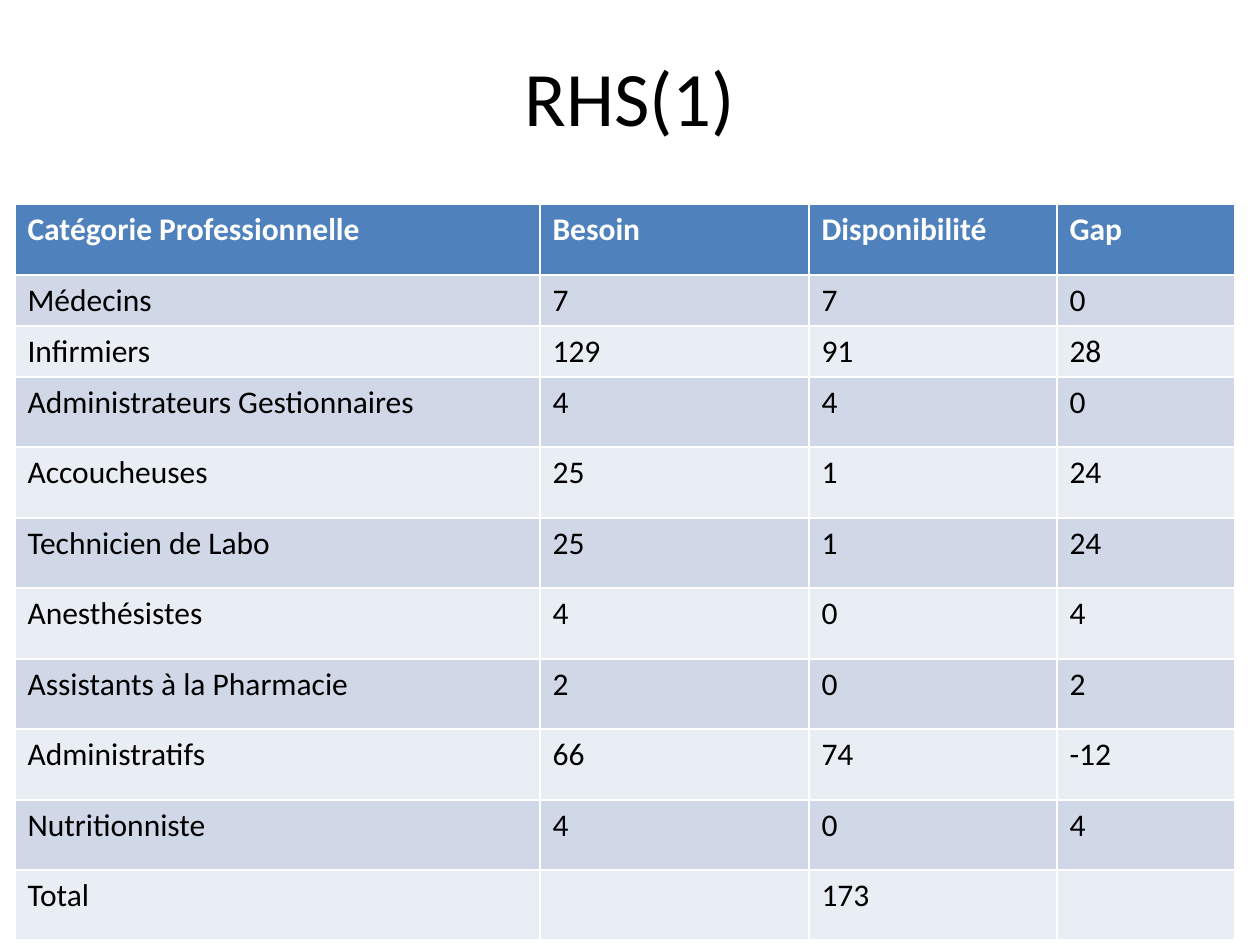
import itertools

import pptx
import pptx.dml.color
import pptx.enum.text
import pptx.util

PX = 914400 / 126


def px(length):
    return pptx.util.Emu(round(length * PX))


def color(value):
    return pptx.dml.color.RGBColor.from_string(value)


deck = pptx.Presentation()
deck.slide_width = px(1260)
deck.slide_height = px(945)
slide = deck.slides.add_slide(deck.slide_layouts[6])

title = slide.shapes.add_textbox(px(63), px(17), px(1134), px(158)).text_frame
title.word_wrap = True
title.vertical_anchor = pptx.enum.text.MSO_ANCHOR.MIDDLE
heading = title.paragraphs[0]
heading.text = "RHS(1)"
heading.alignment = pptx.enum.text.PP_ALIGN.CENTER
heading.font.name = "Calibri"
heading.font.size = pptx.util.Pt(44)
heading.font.color.rgb = color("000000")

staff = [
    ("Catégorie Professionnelle", "Besoin", "Disponibilité", "Gap"),
    ("Médecins", "7", "7", "0"),
    ("Infirmiers", "129", "91", "28"),
    ("Administrateurs Gestionnaires", "4", "4", "0"),
    ("Accoucheuses", "25", "1", "24"),
    ("Technicien de Labo", "25", "1", "24"),
    ("Anesthésistes", "4", "0", "4"),
    ("Assistants à la Pharmacie", "2", "0", "2"),
    ("Administratifs", "66", "74", "-12"),
    ("Nutritionniste", "4", "0", "4"),
    ("Total", "", "173", ""),
]
column_edges = [15, 540, 809, 1057, 1235]
row_edges = [204, 275, 326, 377, 447, 518, 588, 659, 729, 800, 870, 940]

left, right = column_edges[0], column_edges[-1]
top, bottom = row_edges[0], row_edges[-1]
staffing = slide.shapes.add_table(
    len(staff), len(staff[0]), px(left), px(top), px(right - left), px(bottom - top)
).table
for column, (start, end) in zip(staffing.columns, itertools.pairwise(column_edges)):
    column.width = px(end - start)
for row, (start, end) in zip(staffing.rows, itertools.pairwise(row_edges)):
    row.height = px(end - start)

for r, entries in enumerate(staff):
    is_header = r == 0
    band = "4F81BD" if is_header else ("E9EDF4", "D0D8E8")[r % 2]
    for c, entry in enumerate(entries):
        cell = staffing.cell(r, c)
        cell.fill.solid()
        cell.fill.fore_color.rgb = color(band)
        paragraph = cell.text_frame.paragraphs[0]
        paragraph.text = entry
        paragraph.font.name = "Calibri"
        paragraph.font.size = pptx.util.Pt(18)
        paragraph.font.bold = is_header
        paragraph.font.color.rgb = color("FFFFFF" if is_header else "000000")

deck.save("out.pptx")
